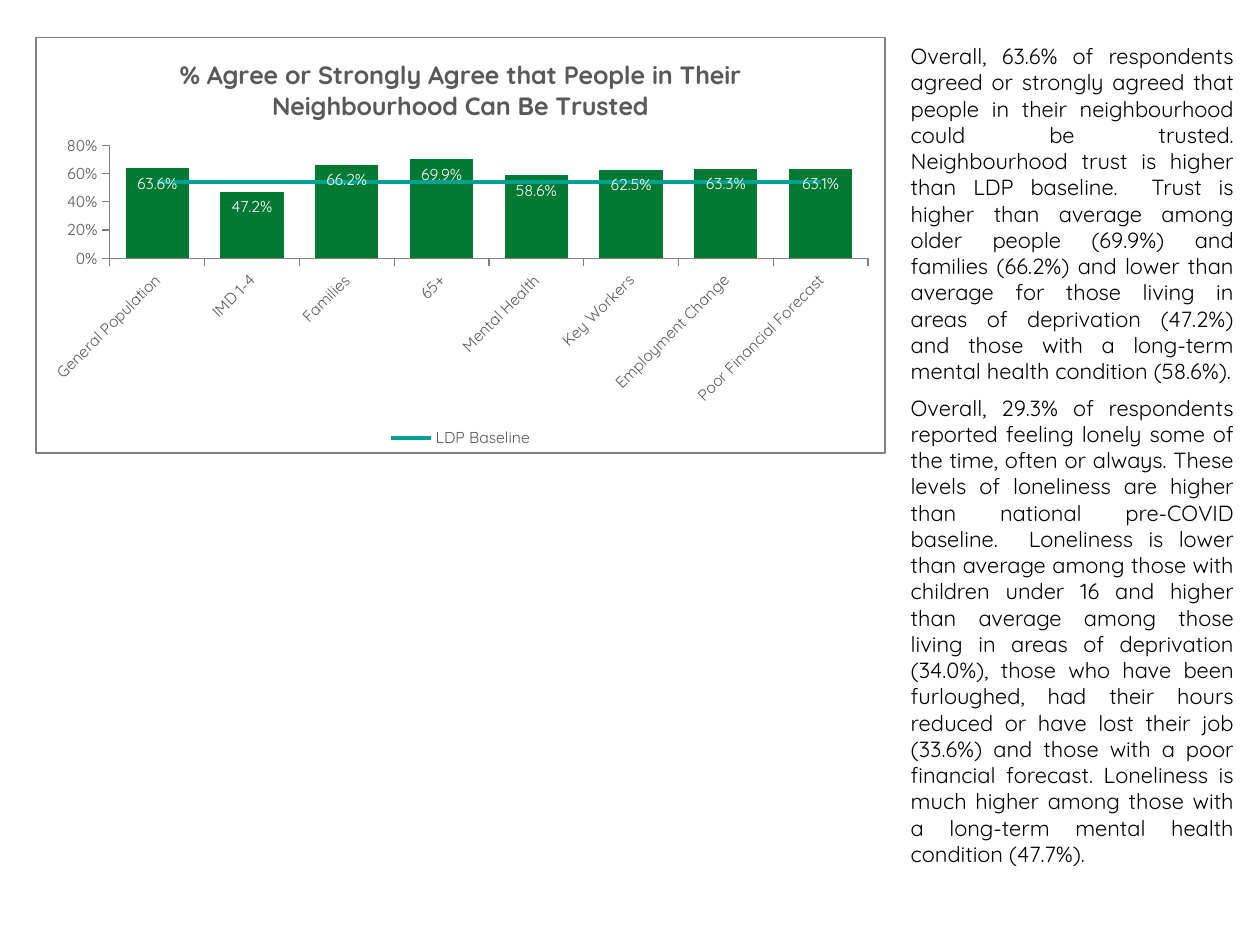
from copy import deepcopy

from pptx import Presentation
from pptx.chart.data import CategoryChartData
from pptx.dml.color import RGBColor
from pptx.enum.chart import XL_CHART_TYPE, XL_LABEL_POSITION, XL_LEGEND_POSITION, XL_TICK_MARK
from pptx.enum.text import MSO_AUTO_SIZE, PP_ALIGN
from pptx.oxml import parse_xml
from pptx.oxml.ns import nsdecls, qn
from pptx.util import Inches, Pt

# Content
FONT = "Quicksand"
COLORS = {"bar": "007A33", "baseline": "00A191", "axis": "808080",
          "label": "595959", "text": "000000", "white": "FFFFFF"}
TITLE = "% Agree or Strongly Agree that People in Their Neighbourhood Can Be Trusted"
TRUST = [("General Population", 0.636), ("IMD 1-4", 0.472), ("Families", 0.662),
         ("65+", 0.699), ("Mental Health", 0.586), ("Key Workers", 0.625),
         ("Employment Change", 0.633), ("Poor Financial Forecast", 0.631)]
BASELINE = 0.54
COMMENTARY = [
    "Overall, 63.6% of respondents agreed or strongly agreed that people in their "
    "neighbourhood could be trusted.\vNeighbourhood trust is higher than LDP baseline.  "
    "Trust is higher than average among older people (69.9%) and families (66.2%) and "
    "lower than average for those living in areas of deprivation (47.2%) and those with "
    "a long-term mental health condition (58.6%).",
    "Overall, 29.3% of respondents reported feeling lonely some of the time, often or "
    "always. These levels of loneliness are higher than national pre-COVID baseline.  "
    "Loneliness is lower than average among those with children under 16 and higher than "
    "average among those living in areas of deprivation (34.0%), those who have been "
    "furloughed, had their hours reduced or have lost their job (33.6%) and those with a "
    "poor financial forecast. Loneliness is much higher among those with a long-term "
    "mental health condition (47.7%).",
]
PLOT_AREA = {"x": 0.087, "y": 0.26, "w": 0.893, "h": 0.272}


def color(name):
    return RGBColor.from_string(COLORS[name])


def style_font(font, size, name, bold=False):
    font.name, font.size, font.bold = FONT, Pt(size), bold
    font.color.rgb = color(name)


def write(paragraph, text, size=12.5, name="text", bold=False, align=None, before=0):
    paragraph.text = text
    paragraph.alignment = align
    paragraph.space_before = Pt(before)
    for span in paragraph.runs:
        style_font(span.font, size, name, bold)


def style_axis(axis):
    axis.has_major_gridlines = False
    axis.major_tick_mark = XL_TICK_MARK.OUTSIDE
    axis.minor_tick_mark = XL_TICK_MARK.NONE
    axis.format.line.color.rgb = color("axis")
    axis.format.line.width = Pt(0.75)
    style_font(axis.tick_labels.font, 9, "label")


def move_last_series_to_line(chart):
    """Turn the last column series into a line on the same axes."""
    bars = chart._chartSpace.find(".//" + qn("c:barChart"))
    series = bars.findall(qn("c:ser"))[-1]
    line = parse_xml(f'<c:lineChart {nsdecls("c")}><c:grouping val="standard"/>'
                     '<c:varyColors val="0"/><c:marker val="1"/></c:lineChart>')
    bars.addnext(line)
    for flag in series.findall(qn("c:invertIfNegative")):
        series.remove(flag)
    line.insert(2, series)
    series.find(qn("c:cat")).addprevious(
        parse_xml(f'<c:marker {nsdecls("c")}><c:symbol val="none"/></c:marker>'))
    for axis_id in bars.findall(qn("c:axId")):
        line.append(deepcopy(axis_id))


def frame_chart(chart):
    """White chart area, thin border and a fixed inner plot area."""
    space = chart._chartSpace
    space.find(qn("c:chart")).addnext(parse_xml(
        f'<c:spPr {nsdecls("c", "a")}><a:solidFill><a:srgbClr val="{COLORS["white"]}"/>'
        f'</a:solidFill><a:ln w="{Pt(0.75)}"><a:solidFill>'
        f'<a:srgbClr val="{COLORS["axis"]}"/></a:solidFill></a:ln></c:spPr>'))
    plot_area = space.find(".//" + qn("c:plotArea"))
    for layout in plot_area.findall(qn("c:layout")):
        plot_area.remove(layout)
    places = "".join(f'<c:{key} val="{value}"/>' for key, value in PLOT_AREA.items())
    plot_area.insert(0, parse_xml(
        f'<c:layout {nsdecls("c")}><c:manualLayout><c:layoutTarget val="inner"/>'
        f'<c:xMode val="edge"/><c:yMode val="edge"/>{places}</c:manualLayout></c:layout>'))


def add_trust_chart(page):
    data = CategoryChartData(number_format="0.0%")
    data.categories = [group for group, _ in TRUST]
    data.add_series("Series 1", [share for _, share in TRUST])
    data.add_series("LDP Baseline", [BASELINE] * len(TRUST))
    chart = page.shapes.add_chart(XL_CHART_TYPE.COLUMN_CLUSTERED, Inches(0.28), Inches(0.29),
                                  Inches(6.75), Inches(3.31), data).chart
    style_font(chart.font, 10, "text")
    write(chart.chart_title.text_frame.paragraphs[0], TITLE, size=14.4, name="label", bold=True)
    chart.chart_title.include_in_layout = False

    # Axes
    for axis in (chart.category_axis, chart.value_axis):
        style_axis(axis)
    category_text = chart.category_axis._element.find(qn("c:txPr"))
    category_text.find(qn("a:bodyPr")).set("rot", "-2700000")
    values = chart.value_axis
    values.minimum_scale, values.maximum_scale, values.major_unit = 0, 0.8, 0.2
    values.tick_labels.number_format = "0%"
    values.tick_labels.number_format_is_linked = False

    # Columns and baseline
    columns = chart.plots[0]
    columns.gap_width, columns.overlap, columns.vary_by_categories = 50, -27, False
    bars = columns.series[0]
    bars.format.fill.solid()
    bars.format.fill.fore_color.rgb = color("bar")
    labels = bars.data_labels
    labels.show_value = True
    labels.position = XL_LABEL_POSITION.INSIDE_END
    labels.number_format, labels.number_format_is_linked = "0.0%", False
    style_font(labels.font, 9, "white")
    move_last_series_to_line(chart)
    baseline = chart.plots[1].series[0]
    baseline.smooth = False
    baseline.format.line.color.rgb = color("baseline")
    baseline.format.line.width = Pt(2.25)

    # Legend names the baseline only
    chart.has_legend = True
    legend = chart.legend
    legend.position, legend.include_in_layout = XL_LEGEND_POSITION.BOTTOM, False
    style_font(legend.font, 9, "label")
    hidden_entry = parse_xml(f'<c:legendEntry {nsdecls("c")}><c:idx val="0"/>'
                             '<c:delete val="1"/></c:legendEntry>')
    legend_position = legend._element.find(qn("c:legendPos"))
    if legend_position is None:
        legend._element.insert(0, hidden_entry)
    else:
        legend_position.addnext(hidden_entry)
    frame_chart(chart)


def add_commentary(page):
    box = page.shapes.add_textbox(Inches(7.13), Inches(0.29), Inches(2.76), Inches(7.13))
    frame = box.text_frame
    frame.word_wrap = True
    frame.auto_size = MSO_AUTO_SIZE.SHAPE_TO_FIT_TEXT
    for index, text in enumerate(COMMENTARY):
        paragraph = frame.add_paragraph() if index else frame.paragraphs[0]
        write(paragraph, text, align=PP_ALIGN.JUSTIFY, before=6 if index else 0)


def main():
    deck = Presentation()
    deck.slide_width, deck.slide_height = Inches(10), Inches(7.5)
    page = deck.slides.add_slide(deck.slide_layouts[6])
    add_trust_chart(page)
    add_commentary(page)
    deck.save("out.pptx")


if __name__ == "__main__":
    main()
